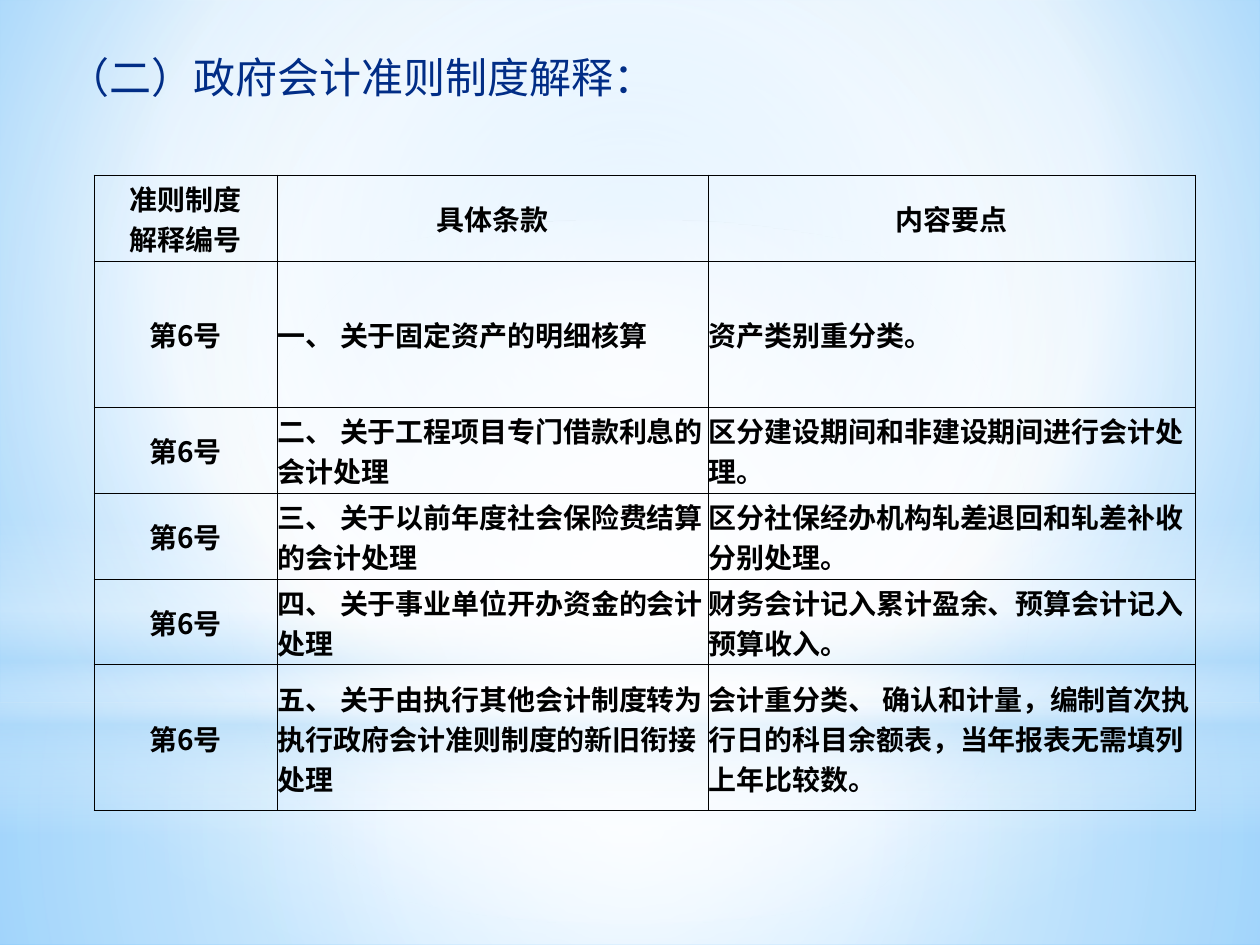
from dataclasses import dataclass

from lxml import etree
from pptx import Presentation
from pptx.dml.color import RGBColor
from pptx.enum.shapes import MSO_SHAPE
from pptx.enum.text import MSO_ANCHOR, MSO_AUTO_SIZE, PP_ALIGN
from pptx.oxml import parse_xml
from pptx.oxml.ns import nsdecls, qn
from pptx.util import Emu, Pt

RECTANGLE, OVAL = MSO_SHAPE.RECTANGLE, MSO_SHAPE.OVAL
TOP, MIDDLE = MSO_ANCHOR.TOP, MSO_ANCHOR.MIDDLE
LEFT, CENTER = PP_ALIGN.LEFT, PP_ALIGN.CENTER
GROW = MSO_AUTO_SIZE.SHAPE_TO_FIT_TEXT
TITLE_ONLY_LAYOUT = 5
EMU_PER_PX = 914400 / 126
WIDTH, HEIGHT = 1260, 945


@dataclass(frozen=True)
class Theme:
    """Colours, font and type sizes of the slide."""

    font: str = "Noto Sans CJK SC"
    title_size: int = 24
    table_size: int = 16
    text: str = "000000"
    border: str = "000000"
    border_width: float = 0.5
    title_stops: tuple = ((0, "012D86", 100), (100, "0E2557", 100))
    sky_stops: tuple = ((0, "9ED5FF", 100), (60, "FFFFFF", 100), (100, "5BB9FF", 100))
    lower_stops: tuple = ((0, "FFFFFF", 91), (37, "FFFFFF", 76), (100, "B4DCFA", 79))
    upper_stops: tuple = ((0, "FFFFFF", 89), (48, "FFFFFF", 62), (100, "B4DCFA", 79))
    horizon_stops: tuple = (
        (0, "FFFFFF", 0), (29, "FFFFFF", 30), (45, "B4DCFA", 40),
        (55, "FFFFFF", 26), (65, "B4DCFA", 60), (100, "FFFFFF", 0),
    )
    glow_stops: tuple = ((0, "FFFFFF", 100), (56, "FFFFFF", 0))


THEME = Theme()
CENTRE_FOCUS = (50, 50, 50, 50)
SKY_FOCUS = (20, 10, 20, 60)
COLUMN_WIDTHS = (183, 431, 487)
ROW_HEIGHTS = (86, 146, 86, 86, 86, 146)
HEADINGS = ("准则制度\n解释编号", "具体条款", "内容要点")
NUMBER = "第6号"
CLAUSES = (
    ("一、 关于固定资产的明细核算", "资产类别重分类。"),
    ("二、 关于工程项目专门借款利息的会计处理", "区分建设期间和非建设期间进行会计处理。"),
    ("三、 关于以前年度社会保险费结算的会计处理", "区分社保经办机构轧差退回和轧差补收分别处理。"),
    ("四、 关于事业单位开办资金的会计处理", "财务会计记入累计盈余、预算会计记入预算收入。"),
    ("五、 关于由执行其他会计制度转为执行政府会计准则制度的新旧衔接处理",
     "会计重分类、 确认和计量，编制首次执行日的科目余额表，当年报表无需填列上年比较数。"),
)


def px(length):
    """Turn pixels into EMU."""
    return Emu(round(length * EMU_PER_PX))


def gradient(stops, focus=None):
    """Return a gradient fill, circular around a focus or else running downwards."""
    colours = "".join(
        f'<a:gs pos="{position * 1000}"><a:srgbClr val="{colour}">'
        f'<a:alpha val="{opacity * 1000}"/></a:srgbClr></a:gs>'
        for position, colour, opacity in stops
    )
    direction = '<a:lin ang="5400000" scaled="0"/>'
    if focus:
        sides = " ".join(f'{side}="{share * 1000}"' for side, share in zip("ltrb", focus))
        direction = f'<a:path path="circle"><a:fillToRect {sides}/></a:path>'
    return parse_xml(
        f'<a:gradFill {nsdecls("a")} rotWithShape="1"><a:gsLst>{colours}</a:gsLst>{direction}</a:gradFill>'
    )


def add_run(paragraph, text, size):
    """Add a run in the theme font and return it."""
    run = paragraph.add_run()
    run.text = text
    run.font.size = Pt(size)
    run.font.name = THEME.font
    etree.SubElement(run.font._element, qn("a:ea"), typeface=THEME.font)
    return run


def add_glow(slide, preset, box, stops, focus=CENTRE_FOCUS):
    """Add a borderless shape with a translucent gradient."""
    shape = slide.shapes.add_shape(preset, *map(px, box))
    shape.shadow.inherit = False
    shape.line.fill.background()
    shape.element.spPr.find(qn("a:prstGeom")).addnext(gradient(stops, focus))


def add_backdrop(slide, box):
    """Fill the background and lay the sky, horizon and glow over it."""
    left, top, width, height = box
    background = parse_xml(f'<p:bg {nsdecls("p")}><p:bgPr/></p:bg>')
    properties = background[0]
    properties.append(gradient(THEME.sky_stops, SKY_FOCUS))
    etree.SubElement(properties, qn("a:effectLst"))
    slide.element.cSld.insert(0, background)
    split = 703
    add_glow(slide, RECTANGLE, (left, top + split, width, height - split), THEME.lower_stops)
    add_glow(slide, RECTANGLE, (left, top, width, split), THEME.upper_stops)
    add_glow(slide, RECTANGLE, (left, top + 519, width, 315), THEME.horizon_stops, None)
    add_glow(slide, OVAL, (left, top + 220, width, split), THEME.glow_stops)


def add_title(slide, box, text):
    """Place the title placeholder in front of the backdrop."""
    title = slide.shapes.title
    slide.shapes.element.append(title.element)
    title.left, title.top, title.width, title.height = map(px, box)
    frame = title.text_frame
    frame.word_wrap = True
    frame.auto_size = GROW
    frame.vertical_anchor = TOP
    paragraph = frame.paragraphs[0]
    paragraph.alignment = LEFT
    run = add_run(paragraph, text, THEME.title_size)
    run.font._element.insert(0, gradient(THEME.title_stops))


def format_cell(cell, text, alignment):
    """Write a bold cell with thin borders on all sides and no fill."""
    cell.margin_left = cell.margin_right = cell.margin_top = px(1)
    cell.margin_bottom = px(0)
    cell.vertical_anchor = MIDDLE
    cell.fill.background()
    for index, side in enumerate("LRTB"):
        border = parse_xml(
            f'<a:ln{side} {nsdecls("a")} w="{Pt(THEME.border_width)}"><a:solidFill>'
            f'<a:srgbClr val="{THEME.border}"/></a:solidFill></a:ln{side}>'
        )
        cell._tc.tcPr.insert(index, border)
    paragraph = cell.text_frame.paragraphs[0]
    paragraph.alignment = alignment
    for index, line in enumerate(text.split("\n")):
        if index:
            paragraph.add_line_break()
        run = add_run(paragraph, line, THEME.table_size)
        run.font.bold = True
        run.font.color.rgb = RGBColor.from_string(THEME.text)


def add_clause_table(slide, box):
    """Add the table of interpretation clauses."""
    rows = [HEADINGS] + [(NUMBER, *clause) for clause in CLAUSES]
    table = slide.shapes.add_table(len(rows), len(HEADINGS), *map(px, box)).table
    table.first_row = table.horz_banding = False
    for column, width in zip(table.columns, COLUMN_WIDTHS):
        column.width = px(width)
    for row_index, (row, height) in enumerate(zip(rows, ROW_HEIGHTS)):
        table.rows[row_index].height = px(height)
        for column_index, text in enumerate(row):
            centred = row_index == 0 or column_index == 0
            format_cell(table.cell(row_index, column_index), text, CENTER if centred else LEFT)


def main():
    """Build and save the presentation."""
    presentation = Presentation()
    presentation.slide_width, presentation.slide_height = px(WIDTH), px(HEIGHT)
    slide = presentation.slides.add_slide(presentation.slide_layouts[TITLE_ONLY_LAYOUT])
    add_backdrop(slide, (0, 0, WIDTH, HEIGHT))
    add_title(slide, (55, 45, 583, 63), "（二）政府会计准则制度解释：")
    add_clause_table(slide, (94, 175, sum(COLUMN_WIDTHS), sum(ROW_HEIGHTS)))
    presentation.save("out.pptx")


if __name__ == "__main__":
    main()
